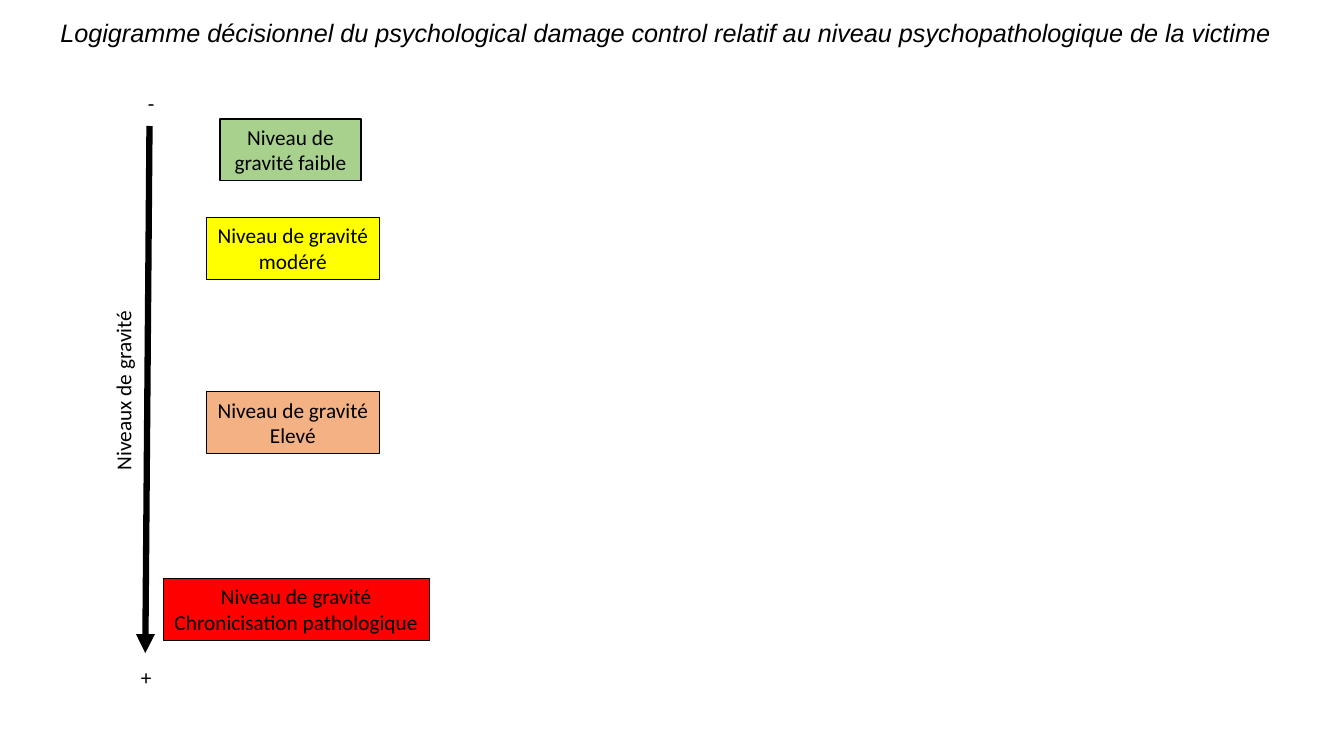
from lxml import etree
from pptx import Presentation
from pptx.dml.color import RGBColor
from pptx.enum.shapes import MSO_CONNECTOR, MSO_SHAPE
from pptx.enum.text import MSO_ANCHOR, MSO_AUTO_SIZE, PP_ALIGN
from pptx.oxml.ns import qn
from pptx.util import Pt


def color(hex_value):
    return RGBColor.from_string(hex_value)


def write(sp, lines, align=PP_ALIGN.LEFT, wrap=False, font="Calibri", size=15.2):
    tf = sp.text_frame
    tf.word_wrap = wrap
    tf.auto_size = MSO_AUTO_SIZE.SHAPE_TO_FIT_TEXT
    tf.vertical_anchor = MSO_ANCHOR.TOP
    tf.text = lines
    for p in tf.paragraphs:
        p.alignment = align
        p.font.name = font
        p.font.size = Pt(size)
        p.font.color.rgb = color("000000")
    return tf


prs = Presentation()
prs.slide_width, prs.slide_height = Pt(960), Pt(540)
s = prs.slides.add_slide(prs.slide_layouts[6])

# Severity boxes: left, top, width, fill, line width, wrap, text
levels = [
    (157, 85, 101, "A9D18E", 1, True, "Niveau de gravité faible"),
    (147.6, 155.5, 123.2, "FFFF00", 0.75, False, "Niveau de gravité\nmodéré"),
    (147.6, 280, 123.2, "F4B183", 0.75, False, "Niveau de gravité\nElevé"),
    (116.6, 413.3, 190, "FF0000", 0.75, False,
     "Niveau de gravité\nChronicisation pathologique"),
]
for left, top, width, fill, line, wrap, text in levels:
    sp = s.shapes.add_shape(MSO_SHAPE.RECTANGLE, Pt(left), Pt(top), Pt(width), Pt(44))
    sp.shadow.inherit = False
    sp.fill.solid()
    sp.fill.fore_color.rgb = color(fill)
    sp.line.color.rgb = color("000000")
    sp.line.width = Pt(line)
    write(sp, text, PP_ALIGN.CENTER, wrap)

# Severity arrow
arrow = s.shapes.add_connector(MSO_CONNECTOR.STRAIGHT, Pt(106.8), Pt(90), Pt(103.8), Pt(466.5))
arrow.line.color.rgb = color("000000")
arrow.line.width = Pt(4.5)
etree.SubElement(arrow.line._get_or_add_ln(), qn("a:tailEnd"), type="triangle")
etree.SubElement(arrow._element.spPr, qn("a:effectLst"))

# Arrow labels: left, top, width, rotation, text
labels = [
    (98.6, 61.2, 19.4, 0, "-"),
    (93.6, 471, 22.3, 0, "+"),
    (23, 265, 130.3, 270, "Niveaux de gravité"),
]
for left, top, width, rotation, text in labels:
    sp = s.shapes.add_textbox(Pt(left), Pt(top), Pt(width), Pt(26))
    sp.rotation = rotation
    write(sp, text)

# Title
sp = s.shapes.add_textbox(Pt(36), Pt(7.2), Pt(908.6), Pt(29.5))
title = "Logigramme décisionnel du psychological damage control relatif au niveau psychopathologique de la victime"
p = write(sp, title, PP_ALIGN.JUSTIFY, True, "Arial", 18).paragraphs[0]
p.font.italic = True
p.line_spacing = 1.07
p.space_after = Pt(8)

prs.save("out.pptx")
